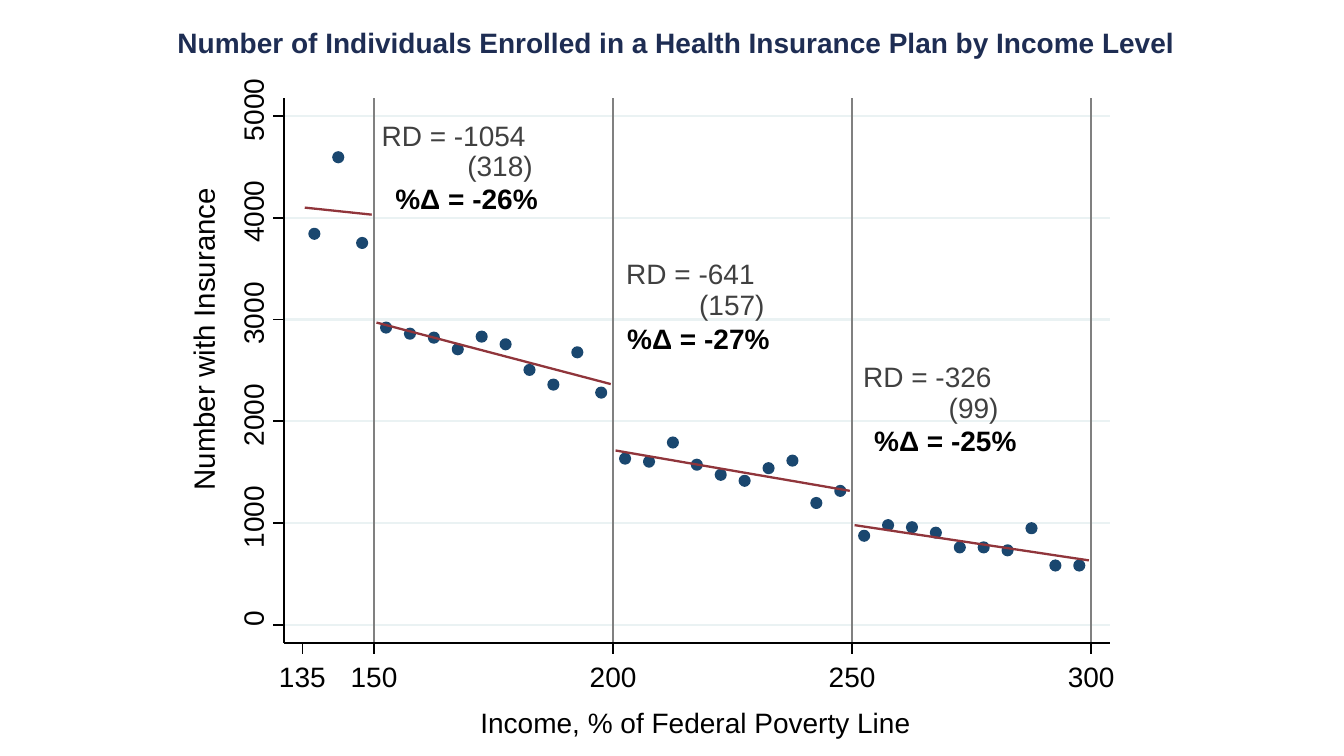
from lxml.etree import SubElement
from pptx import Presentation
from pptx.dml.color import RGBColor
from pptx.enum.shapes import MSO_CONNECTOR, MSO_SHAPE
from pptx.enum.text import MSO_ANCHOR, MSO_AUTO_SIZE, PP_ALIGN
from pptx.oxml.ns import qn
from pptx.util import Pt

COLORS = {"white": "FFFFFF", "black": "000000", "title": "1E2D53", "grid": "EAF2F3",
          "cutoff": "808080", "marker": "1A476F", "fit": "90353B", "note": "404040"}
TITLE = "Number of Individuals Enrolled in a Health Insurance Plan by Income Level"
X_TITLE = "Income, % of Federal Poverty Line"
Y_TITLE = "Number with Insurance"
X_TICKS = [135, 150, 200, 250, 300]
Y_TICKS = [0, 1000, 2000, 3000, 4000, 5000]
FIRST_INCOME, INCOME_STEP = 137.5, 5
ENROLLED = [
    3842, 4594, 3752,
    2921, 2861, 2822, 2708, 2832, 2757, 2505, 2361, 2678, 2282,
    1634, 1604, 1792, 1574, 1475, 1416, 1540, 1614, 1198, 1317,
    876, 980, 960, 906, 762, 762, 733, 950, 584, 584,
]
FITS = [(135.5, 149.5, 4099, 4030), (150.5, 199.5, 2970, 2366),
        (200.5, 249.5, 1713, 1317), (250.5, 299.5, 980, 634)]
NOTES = [
    [("RD = -1054", 272.2, 85, 103.7), ("(318)", 333.5, 105.8, 47.4), ("%Δ = -26%", 282.2, 129.6, 102.2)],
    [("RD = -641", 447.1, 182.9, 92.2), ("(157)", 499.1, 205.2, 47.4), ("%Δ = -27%", 447.8, 229.7, 102.2)],
    [("RD = -326", 616.3, 257, 92.2), ("(99)", 677.5, 278.6, 36), ("%Δ = -25%", 624.2, 302.4, 102.2)],
]

LEFT, TOP, RIGHT, BOTTOM = 203, 69.8, 792.7, 459.4
TICK, MARKER, TEXT_HEIGHT = 7.9, 7, 24.5
THIN, THICK = 1.25, 1.63


def income_x(income):
    return 216 + (income - 135) * 3.415


def count_y(count):
    return 446.4 - count * 0.07272


def rgb(name):
    return RGBColor.from_string(COLORS[name])


def style_shape(shape, fill, line, width):
    shape.shadow.inherit = False
    if fill:
        shape.fill.solid()
        shape.fill.fore_color.rgb = rgb(fill)
    else:
        shape.fill.background()
    shape.line.color.rgb = rgb(line)
    shape.line.width = Pt(width)


def add_line(page, x1, y1, x2, y2, color, width):
    line = page.shapes.add_connector(MSO_CONNECTOR.STRAIGHT, Pt(x1), Pt(y1), Pt(x2), Pt(y2))
    line.line.color.rgb = rgb(color)
    line.line.width = Pt(width)
    SubElement(line._element.spPr, qn("a:effectLst"))


def add_text(holder, text, left, top, width, color="black", bold=False, size=20, wrap=False):
    box = holder.shapes.add_textbox(Pt(left), Pt(top), Pt(width), Pt(TEXT_HEIGHT))
    frame = box.text_frame
    frame.margin_left = frame.margin_right = frame.margin_top = frame.margin_bottom = 0
    frame.word_wrap = wrap
    frame.auto_size = MSO_AUTO_SIZE.SHAPE_TO_FIT_TEXT
    frame.vertical_anchor = MSO_ANCHOR.TOP
    para = frame.paragraphs[0]
    para.text = text
    para.alignment = PP_ALIGN.CENTER
    para.font.name = "Arial"
    para.font.size = Pt(size)
    para.font.bold = bold
    para.font.color.rgb = rgb(color)
    return box


def add_centered(page, text, x, y, width, **style):
    return add_text(page, text, x - width / 2, y - TEXT_HEIGHT / 2, width, **style)


def add_plot(page):
    panel = page.shapes.add_shape(MSO_SHAPE.RECTANGLE, Pt(LEFT), Pt(TOP),
                                  Pt(RIGHT - LEFT), Pt(BOTTOM - TOP))
    style_shape(panel, "white", "white", THIN)
    for count in Y_TICKS:
        add_line(page, LEFT, count_y(count), RIGHT, count_y(count), "grid", THICK)
    for income in X_TICKS[1:]:
        add_line(page, income_x(income), BOTTOM, income_x(income), TOP, "cutoff", THICK)
    for index, count in enumerate(ENROLLED):
        x = income_x(FIRST_INCOME + index * INCOME_STEP)
        marker = page.shapes.add_shape(MSO_SHAPE.OVAL, Pt(x - MARKER / 2),
                                       Pt(count_y(count) - MARKER / 2), Pt(MARKER), Pt(MARKER))
        style_shape(marker, "marker", "marker", THICK)
    for start, end, first, last in FITS:
        steps = int(end - start)
        points = [(Pt(income_x(start + step)), Pt(count_y(first + (last - first) * step / steps)))
                  for step in range(steps + 1)]
        builder = page.shapes.build_freeform(*points[0])
        builder.add_line_segments(points[1:], close=False)
        style_shape(builder.convert_to_shape(), None, "fit", THICK)


def add_axes(page):
    add_line(page, LEFT, BOTTOM, LEFT, TOP, "black", THIN)
    for count in Y_TICKS:
        y = count_y(count)
        add_line(page, LEFT, y, LEFT - TICK, y, "black", THIN)
        add_centered(page, str(count), 180.7, y - 4.3, 11.15 * len(str(count))).rotation = 270
    add_line(page, LEFT, BOTTOM, RIGHT, BOTTOM, "black", THIN)
    for income in X_TICKS:
        x = income_x(income)
        add_line(page, x, BOTTOM, x, BOTTOM + TICK, "black", THIN)
        add_centered(page, str(income), x, 483.1, 33.8)


def main():
    """Build the slide of insurance enrolment by income level."""
    deck = Presentation()
    deck.slide_width, deck.slide_height = Pt(960), Pt(540)
    page = deck.slides.add_slide(deck.slide_layouts[6])
    add_plot(page)
    add_axes(page)
    for note in NOTES:
        group = page.shapes.add_group_shape()
        for text, left, top, width in note:
            strong = text.startswith("%")
            add_text(group, text, left, top, width, "black" if strong else "note", strong)
    add_centered(page, TITLE, 483.1, 30.2, 714.2, color="title", bold=True, wrap=True)
    add_centered(page, X_TITLE, 496.8, 516.2, 309.6)
    add_centered(page, Y_TITLE, 144.7, 242.3, 217.4, size=21).rotation = 270
    deck.save("out.pptx")


if __name__ == "__main__":
    main()
